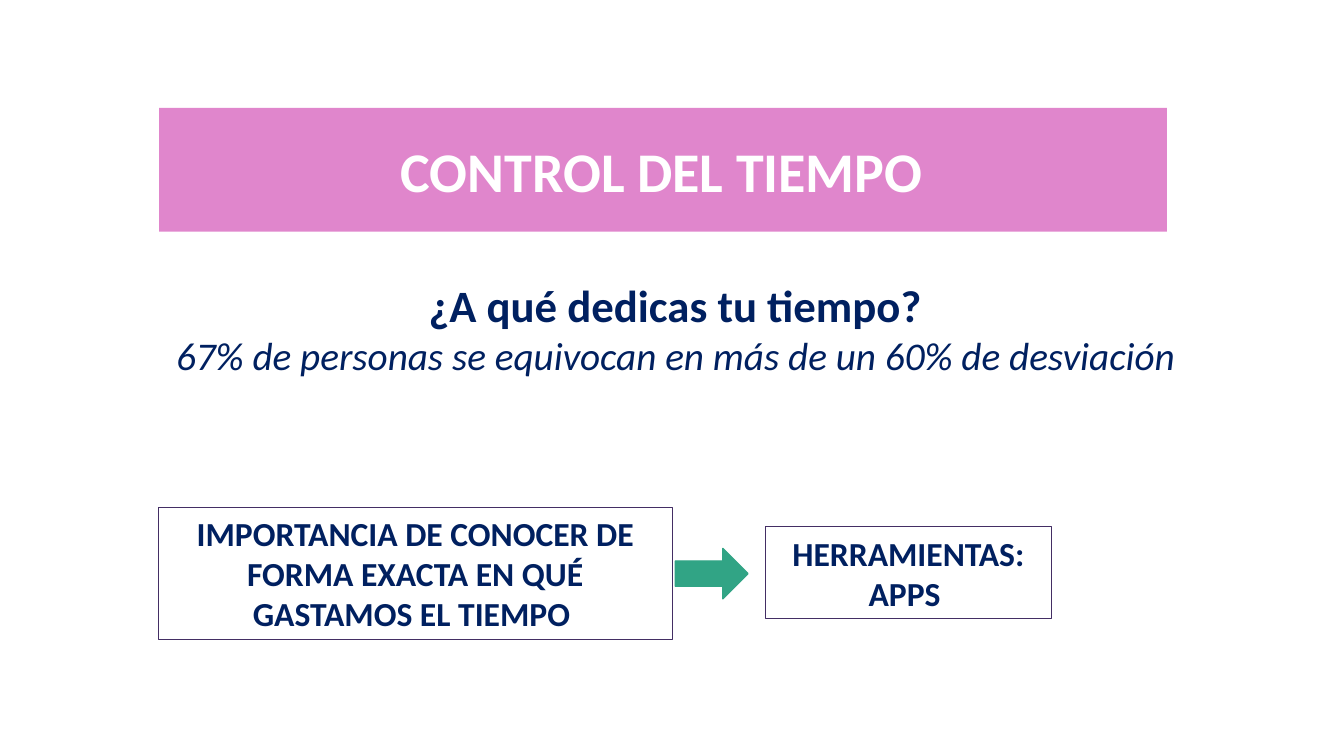
"""Build the time-control slide."""
from dataclasses import dataclass

from lxml import etree
from pptx import Presentation
from pptx import util as u
from pptx.dml.color import RGBColor
from pptx.enum import shapes, text
from pptx.oxml.ns import qn

COLORS = {
    "banner": "C20E9B",
    "title": "FFFFFF",
    "ink": "002060",
    "border": "432E64",
    "arrow": "31A485",
}
FONT = "Calibri"


@dataclass
class Area:
    """A rectangle in centimetres."""
    left: float
    top: float
    width: float
    height: float

    def lengths(self) -> list[u.Length]:
        """Return left, top, width and height as lengths."""
        return [u.Cm(v) for v in (self.left, self.top, self.width, self.height)]


@dataclass
class Line:
    """A centred paragraph."""
    words: str
    size: int
    color: str = "ink"
    bold: bool = True
    italic: bool = False


@dataclass
class Block:
    """A preset shape with its colours and an optional line of text."""
    area: Area
    kind: shapes.MSO_SHAPE
    fill: str | None = None
    border: str | None = None
    weight: float = 0.75
    line: Line | None = None


BANNER = Block(Area(4.01, 2.72, 25.4, 3.12), shapes.MSO_SHAPE.RECTANGLE, fill="banner")
TITLE_AREA = Area(6.86, 3.3, 19.63, 1.96)
TITLE = Line("CONTROL DEL TIEMPO", 40, "title")
QUESTION_AREA = Area(2.9, 6.88, 28.24, 2.82)
QUESTION = [
    Line("¿A qué dedicas tu tiempo?", 32),
    Line("67% de personas se equivocan en más de un 60% de desviación", 28,
         bold=False, italic=True),
]
FLOW = [
    Block(Area(3.99, 12.78, 12.95, 3.33), shapes.MSO_SHAPE.RECTANGLE, border="border",
          line=Line("IMPORTANCIA DE CONOCER DE FORMA EXACTA EN QUÉ GASTAMOS EL TIEMPO ", 24)),
    Block(Area(17.02, 13.82, 1.83, 1.27), shapes.MSO_SHAPE.RIGHT_ARROW,
          fill="arrow", border="arrow", weight=1),
    Block(Area(19.3, 13.28, 7.19, 2.31), shapes.MSO_SHAPE.RECTANGLE, border="border",
          line=Line("HERRAMIENTAS: APPS ", 24)),
]


def rgb(name: str) -> RGBColor:
    """Look up a named colour."""
    return RGBColor.from_string(COLORS[name])


def write(sp, lines: list[Line], anchor=text.MSO_ANCHOR.MIDDLE) -> None:
    """Fill a shape with centred paragraphs."""
    tf = sp.text_frame
    tf.word_wrap = True
    tf.auto_size = text.MSO_AUTO_SIZE.NONE
    tf.vertical_anchor = anchor
    for i, line in enumerate(lines):
        p = tf.add_paragraph() if i else tf.paragraphs[0]
        p.text = line.words
        p.alignment = text.PP_ALIGN.CENTER
        p.line_spacing = 1.0
        p.space_before = u.Pt(0)
        p.font.name = FONT
        p.font.size = u.Pt(line.size)
        p.font.bold = line.bold
        p.font.italic = line.italic
        p.font.color.rgb = rgb(line.color)


def draw(s, block: Block):
    """Add a preset shape to the slide."""
    sp = s.shapes.add_shape(block.kind, *block.area.lengths())
    sp.shadow.inherit = False
    if block.fill:
        sp.fill.solid()
        sp.fill.fore_color.rgb = rgb(block.fill)
    else:
        sp.fill.background()
    if block.border:
        sp.line.color.rgb = rgb(block.border)
        sp.line.width = u.Pt(block.weight)
    else:
        sp.line.fill.background()
    if block.line:
        write(sp, [block.line])
    return sp


def main() -> None:
    """Create the slide and save it."""
    prs = Presentation()
    prs.slide_width, prs.slide_height = u.Cm(33.87), u.Cm(19.05)
    s = prs.slides.add_slide(prs.slide_layouts[5])

    title = s.shapes.title
    title.left, title.top, title.width, title.height = TITLE_AREA.lengths()
    write(title, [TITLE])

    banner = draw(s, BANNER)
    tint = banner.element.spPr.find(qn("a:solidFill")).find(qn("a:srgbClr"))
    etree.SubElement(tint, qn("a:alpha")).set("val", "50000")
    title.element.addprevious(banner.element)

    question = s.shapes.add_textbox(*QUESTION_AREA.lengths())
    write(question, QUESTION, text.MSO_ANCHOR.TOP)

    for block in FLOW:
        draw(s, block)

    prs.save("out.pptx")


if __name__ == "__main__":
    main()
